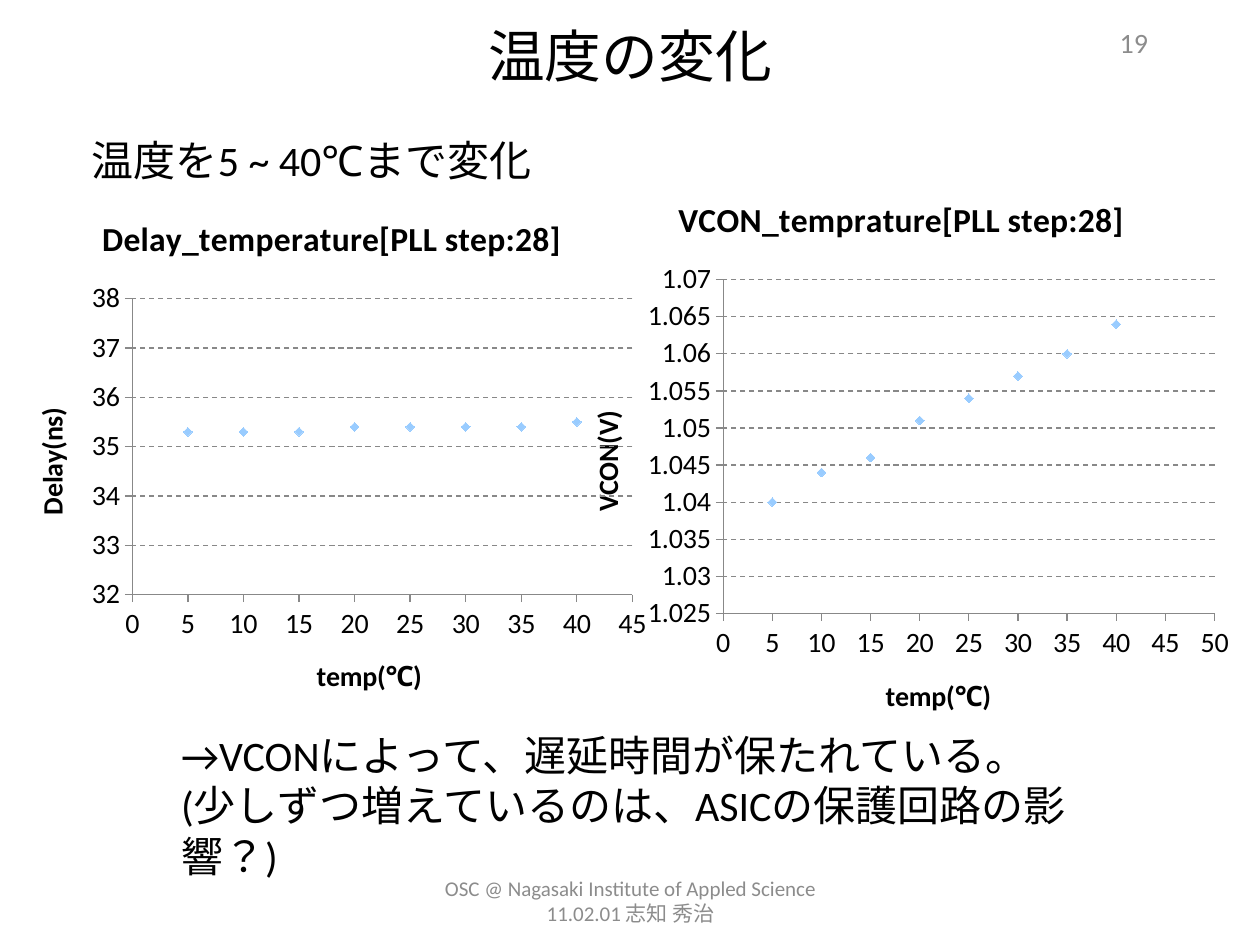
from lxml.etree import SubElement
from pptx import Presentation
from pptx.chart.data import XyChartData
from pptx.dml.color import RGBColor
from pptx.enum.chart import XL_CHART_TYPE, XL_MARKER_STYLE, XL_TICK_MARK
from pptx.enum.dml import MSO_LINE
from pptx.enum.lang import MSO_LANGUAGE_ID
from pptx.enum.text import MSO_ANCHOR, PP_ALIGN
from pptx.oxml import parse_xml
from pptx.oxml.ns import nsdecls, qn
from pptx.util import Inches, Pt

FONT = "Calibri"
COLORS = {"text": "000000", "muted": "8C8C8C", "axis": "888888", "marker": "99CCFF"}
TEMPERATURES = range(5, 45, 5)
VCON = (1.04, 1.044, 1.046, 1.051, 1.054, 1.057, 1.06, 1.064)
DELAY = (35.3, 35.3, 35.3, 35.4, 35.4, 35.4, 35.4, 35.5)


def color(name):
    """Return a palette colour."""
    return RGBColor.from_string(COLORS[name])


def style_font(font, size, name="text", bold=False):
    """Apply the deck font with a size, colour and weight."""
    font.name, font.size, font.bold = FONT, Pt(size), bold
    font.color.rgb = color(name)


def add_text(slide, box, lines, size, name="text", align=PP_ALIGN.LEFT,
             anchor=MSO_ANCHOR.TOP):
    """Place paragraphs of one style in a box."""
    tf = slide.shapes.add_textbox(*map(Inches, box)).text_frame
    tf.word_wrap = True
    tf.vertical_anchor = anchor
    tf.text = "\n".join(lines)
    for p in tf.paragraphs:
        p.alignment = align
        for r in p.runs:
            style_font(r.font, size, name)
            r.font.language_id = MSO_LANGUAGE_ID.JAPANESE


def set_title(owner, text, size):
    """Give a chart or an axis a bold title."""
    title = owner.chart_title if hasattr(owner, "chart_title") else owner.axis_title
    title.text_frame.text = text
    style_font(title.text_frame.paragraphs[0].runs[0].font, size, bold=True)


def set_axis(axis, title, low, high, step):
    """Set the title, scale and line of an axis."""
    set_title(axis, title, 16)
    axis.minimum_scale, axis.maximum_scale, axis.major_unit = low, high, step
    axis.major_tick_mark = XL_TICK_MARK.OUTSIDE
    axis.tick_labels.number_format = "General"
    axis.tick_labels.number_format_is_linked = False
    axis.format.line.color.rgb = color("axis")
    axis.format.line.width = Pt(0.75)


def set_plot_box(chart, box, plot_box):
    """Fix the inner plot area from slide positions in inches."""
    left, top, width, height = box
    x, y, w, h = plot_box
    area = chart.plots[0]._element.getparent()
    for old in area.findall(qn("c:layout")):
        area.remove(old)
    layout = parse_xml(f"<c:layout {nsdecls('c')}/>")
    manual = SubElement(layout, qn("c:manualLayout"))
    settings = {"layoutTarget": "inner", "xMode": "edge", "yMode": "edge",
                "x": (x - left) / width, "y": (y - top) / height,
                "w": w / width, "h": h / height}
    for tag, value in settings.items():
        SubElement(manual, qn(f"c:{tag}")).set("val", str(value))
    area.insert(0, layout)


def add_scatter(slide, box, plot_box, title, y_title, values, x_max, y_scale):
    """Place a scatter chart of values against temperature."""
    data = XyChartData()
    series = data.add_series(y_title)
    for x, y in zip(TEMPERATURES, values):
        series.add_data_point(x, y)
    chart = slide.shapes.add_chart(
        XL_CHART_TYPE.XY_SCATTER, *map(Inches, box), data).chart
    style_font(chart.font, 16)
    chart.has_legend = False
    set_title(chart, title, 19.2)
    chart.chart_title.include_in_layout = False
    set_axis(chart.category_axis, "temp(℃)", 0, x_max, 5)
    set_axis(chart.value_axis, y_title, *y_scale)
    chart.category_axis.has_major_gridlines = False
    chart.value_axis.has_major_gridlines = True
    grid = chart.value_axis.major_gridlines.format.line
    grid.color.rgb = color("axis")
    grid.width = Pt(0.75)
    grid.dash_style = MSO_LINE.DASH
    plot = chart.plots[0]
    plot.vary_by_categories = False
    s = plot.series[0]
    s.smooth = False
    s.format.line.fill.background()
    s.marker.style, s.marker.size = XL_MARKER_STYLE.DIAMOND, 5
    s.marker.format.fill.solid()
    s.marker.format.fill.fore_color.rgb = color("marker")
    s.marker.format.line.fill.background()
    set_plot_box(chart, box, plot_box)
    chart._chartSpace.find(qn("c:chart")).addnext(parse_xml(
        f"<c:spPr {nsdecls('c', 'a')}><a:noFill/><a:ln><a:noFill/></a:ln></c:spPr>"))


def add_header(slide):
    """Place the title, page number and opening statement."""
    add_text(slide, (0.5, 0.17, 9, 0.53), ["温度の変化"], 32.4,
             align=PP_ALIGN.CENTER, anchor=MSO_ANCHOR.MIDDLE)
    add_text(slide, (8.65, 0.05, 0.56, 0.57), ["19"], 16, "muted",
             PP_ALIGN.RIGHT, MSO_ANCHOR.MIDDLE)
    add_text(slide, (0.63, 1.02, 7.31, 0.5), ["温度を5 ~ 40℃まで変化"], 24)


def add_charts(slide):
    """Place the control voltage and delay charts."""
    add_scatter(slide, (4.45, 1.36, 5.41, 4.54), (5.74, 2.22, 3.9, 2.65),
                "VCON_temprature[PLL step:28]", "VCON(V)", VCON, 50,
                (1.025, 1.07, 0.005))
    add_scatter(slide, (0.04, 1.52, 5.19, 4.22), (1.05, 2.37, 3.97, 2.35),
                "Delay_temperature[PLL step:28]", "Delay(ns)", DELAY, 45,
                (32, 38, 1))


def add_footer(slide):
    """Place the conclusion and the credit line."""
    add_text(slide, (1.34, 5.74, 7.87, 0.91),
             ["→VCONによって、遅延時間が保たれている。",
              "(少しずつ増えているのは、ASICの保護回路の影響？)"], 24)
    add_text(slide, (3.42, 6.95, 3.17, 0.4),
             ["OSC @ Nagasaki Institute of Appled Science 11.02.01 志知 秀治"],
             12, "muted", PP_ALIGN.CENTER, MSO_ANCHOR.MIDDLE)


def main():
    """Build and save the slide."""
    prs = Presentation()
    prs.slide_width, prs.slide_height = Inches(10), Inches(7.5)
    slide = prs.slides.add_slide(prs.slide_layouts[6])
    add_header(slide)
    add_charts(slide)
    add_footer(slide)
    prs.save("out.pptx")


if __name__ == "__main__":
    main()
